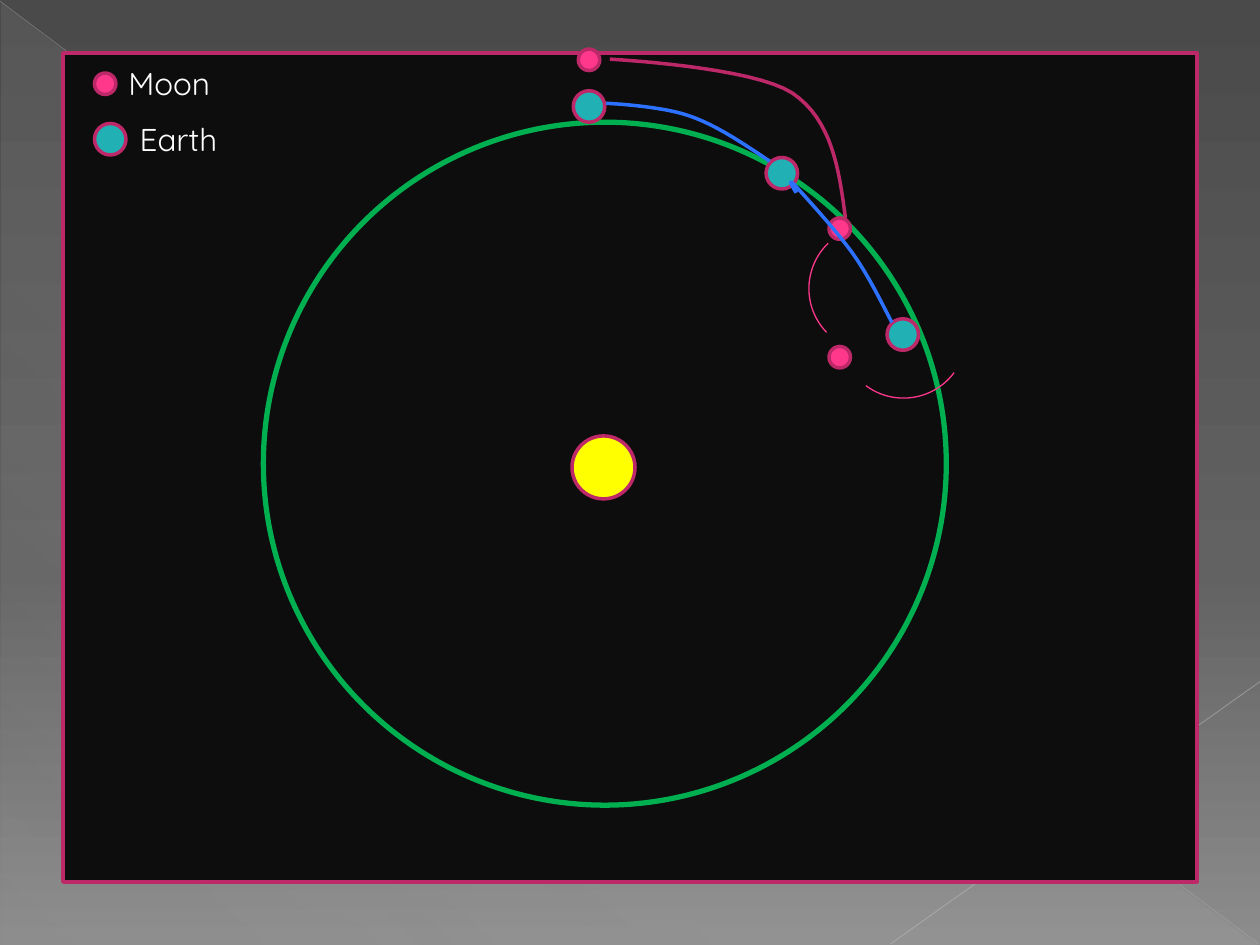
from dataclasses import dataclass
from lxml.etree import SubElement
from pptx import Presentation
from pptx.dml.color import RGBColor
from pptx.enum.shapes import MSO_CONNECTOR as Link, MSO_SHAPE as Form
from pptx.enum.text import MSO_AUTO_SIZE as Fit
from pptx.oxml.ns import qn
from pptx.util import Inches, Pt

COLS, ROWS = 100, 75


@dataclass(frozen=True)
class Theme:
    font: str = "Quicksand"
    size: float = 18
    thin: float = 0.75
    edge: float = 2
    ring: float = 3
    text: str = "FFFFFF"
    space: str = "0D0D0D"
    rim: str = "BD2968"
    moon: str = "FF388C"
    earth: str = "21B1B5"
    sun: str = "FFFF00"
    orbit: str = "00B050"
    trail: str = "2C71FF"
    back: tuple = ((0, "4A4A4A", 100), (60, "626262", 100), (100, "8C8C8C", 100))
    sheen: tuple = ((0, "D2D2D2", 10), (70, "D2D2D2", 8), (100, "D2D2D2", 1))


def fade(node, share):
    """Set the opacity, in percent, of a colour node."""
    SubElement(node, qn("a:alpha")).set("val", str(share * 1000))


def blend(root, stops, angle):
    """Give the gradient under root its stops and its clockwise angle."""
    grad = next(root.iter(qn("a:gradFill")))
    steps = grad.find(qn("a:gsLst"))
    for old in list(steps):
        steps.remove(old)
    for place, color, share in stops:
        stop = SubElement(steps, qn("a:gs"), pos=str(place * 1000))
        node = SubElement(stop, qn("a:srgbClr"), val=color)
        if share < 100:
            fade(node, share)
    grad.find(qn("a:lin")).set("ang", str(angle * 60000))


def curve(start, *bends, steps=16):
    """Return points along a chain of cubic Bezier bends."""
    points = [start]
    for a, b, end in bends:
        first = points[-1]
        for i in range(1, steps + 1):
            t = i / steps
            u = 1 - t
            points.append(tuple(
                u**3 * p + 3 * u * u * t * q + 3 * u * t * t * r + t**3 * s
                for p, q, r, s in zip(first, a, b, end)))
    return points


class Board:
    """Draws on one slide; lengths are columns and rows of the grid."""

    def __init__(self, deck, theme):
        self.theme = theme
        self.slide = deck.slides.add_slide(deck.slide_layouts[6])
        self.shapes = self.slide.shapes
        self.col = deck.slide_width / COLS
        self.row = deck.slide_height / ROWS

    def spot(self, x, y):
        return round(x * self.col), round(y * self.row)

    def stroke(self, line, color, width):
        line.color.rgb = RGBColor.from_string(color)
        line.width = Pt(width)

    def backdrop(self, angle):
        self.slide.background.fill.gradient()
        blend(self.slide.background._cSld, self.theme.back, angle)

    def shape(self, form, x, y, w, h, fill=None, line=None, width=None, turn=0):
        item = self.shapes.add_shape(form, *self.spot(x, y), *self.spot(w, h))
        item.shadow.inherit = False
        item.rotation = turn
        if fill:
            item.fill.solid()
            item.fill.fore_color.rgb = RGBColor.from_string(fill)
        else:
            item.fill.background()
        if line:
            self.stroke(item.line, line, width or self.theme.edge)
        else:
            item.line.fill.background()
        return item

    def disc(self, x, y, size, fill, line=None, width=None):
        """Draw a circle around its centre."""
        half = size / 2
        self.shape(Form.OVAL, x - half, y - half, size, size,
                   fill, line or self.theme.rim, width)

    def moon(self, x, y):
        self.disc(x, y, 1.7, self.theme.moon)

    def earth(self, x, y):
        self.disc(x, y, 2.5, self.theme.earth)

    def arc(self, x, y, turn):
        self.shape(Form.ARC, x, y, 10, 10, line=self.theme.moon,
                   width=self.theme.thin, turn=turn)

    def sheen(self, x, y, w, h, angle):
        item = self.shape(Form.RIGHT_TRIANGLE, x, y, w, h)
        item.fill.gradient()
        blend(item._element.spPr, self.theme.sheen, angle)

    def ray(self, start, end, color, width, share):
        item = self.shapes.add_connector(
            Link.STRAIGHT, *self.spot(*start), *self.spot(*end))
        self.stroke(item.line, color, width)
        props = item._element.spPr
        fade(next(props.iter(qn("a:srgbClr"))), share)
        SubElement(props, qn("a:effectLst"))

    def trail(self, points, color):
        dots = [self.spot(*p) for p in points]
        pen = self.shapes.build_freeform(*dots[0])
        pen.add_line_segments(dots[1:], close=False)
        item = pen.convert_to_shape()
        item.shadow.inherit = False
        item.fill.background()
        self.stroke(item.line, color, self.theme.edge)

    def label(self, text, x, y, w, h, size=None, color=None):
        frame = self.shapes.add_textbox(*self.spot(x, y), *self.spot(w, h)).text_frame
        frame.word_wrap = False
        frame.auto_size = Fit.SHAPE_TO_FIT_TEXT
        run = frame.paragraphs[0].add_run()
        run.text = text
        run.font.name = self.theme.font
        run.font.size = Pt(size or self.theme.size)
        run.font.color.rgb = RGBColor.from_string(color or self.theme.text)


def main():
    deck = Presentation()
    deck.slide_width, deck.slide_height = Inches(10), Inches(7.5)
    look = Theme()
    board = Board(deck, look)

    board.backdrop(90)
    board.sheen(0.1, 0.2, 99.8, 74.8, 133)
    board.ray((0, 0.1), (99.9, 74.9), "BFBFBF", 0.39, 35)
    board.ray((100, 54.1), (70.7, 74.9), "C6C6C6", 0.47, 45)

    board.shape(Form.RECTANGLE, 5, 4.2, 90, 65.8, look.space, look.rim)
    board.disc(48, 36.8, 54.2, look.space, look.orbit, look.ring)
    board.disc(47.9, 37.1, 5, look.sun)

    board.moon(8.35, 6.65)
    board.label("Moon", 9.2, 4.6, 9.2, 4)
    board.earth(8.75, 11.05)
    board.label("Earth", 10.1, 9, 8.2, 4)

    board.moon(66.65, 28.35)
    board.earth(71.65, 26.55)
    board.arc(66.7, 21.6, 126.6)
    board.earth(62.05, 13.75)
    board.moon(66.65, 18.15)
    board.arc(64.2, 17.9, 226)
    board.trail(curve((70.8, 25.6),
                      ((69.8, 23.7), (68.9, 21.8), (67.6, 20)),
                      ((66.3, 18.2), (63.8, 15.5), (63.1, 14.7)),
                      ((62.3, 13.9), (63.2, 15.3), (63.2, 15.3))), look.trail)
    board.earth(46.75, 8.45)
    board.trail(curve((61.1, 12.8),
                      ((59, 11.4), (56.8, 9.9), (54.7, 9.2)),
                      ((52.5, 8.4), (48.1, 8.2), (48.1, 8.2))), look.trail)
    board.moon(46.75, 4.75)
    board.trail(curve((67.1, 17.3),
                      ((66.6, 13.4), (66, 9.5), (62.9, 7.4)),
                      ((59.8, 5.3), (48.4, 4.7), (48.4, 4.7))), look.rim)

    deck.save("out.pptx")


if __name__ == "__main__":
    main()
